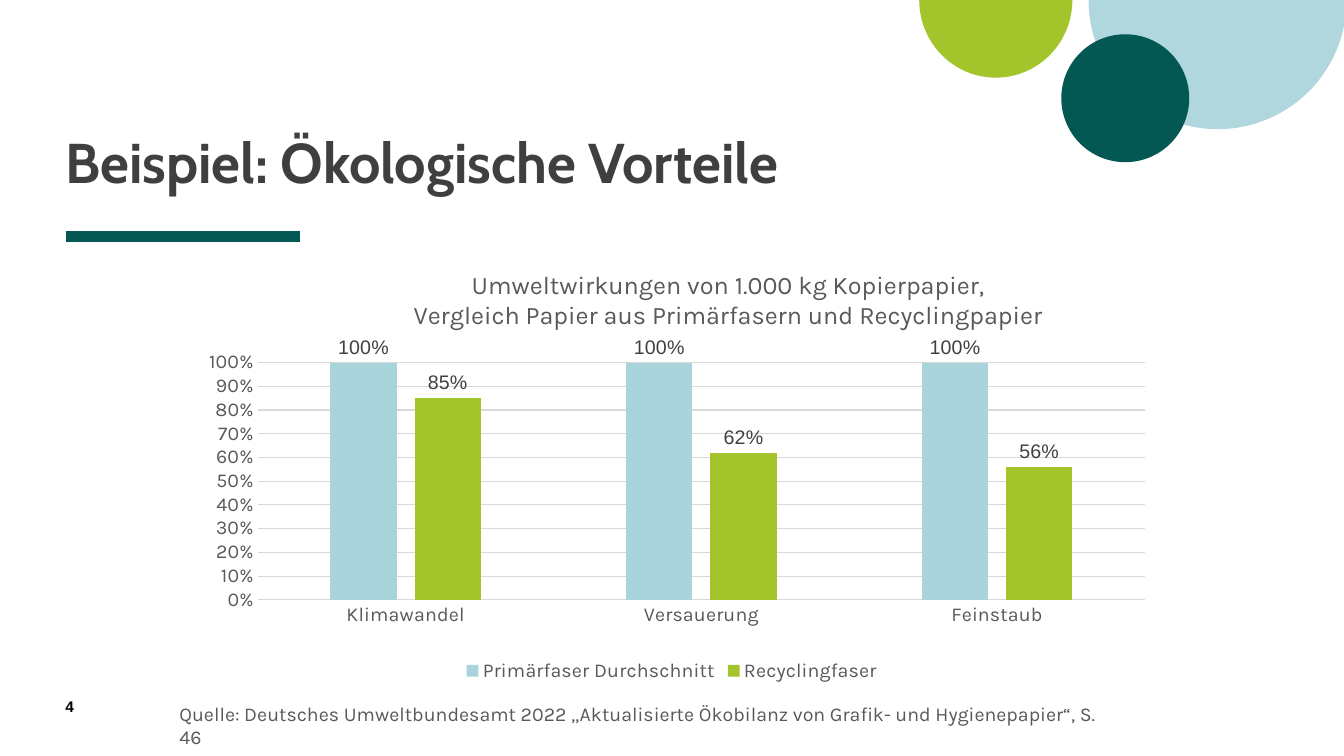
from lxml import etree
from pptx import Presentation
from pptx import util as u
from pptx.chart.data import CategoryChartData
from pptx.dml.color import RGBColor
from pptx.enum import chart as ch, shapes as sh, text as tx
from pptx.oxml import parse_xml
from pptx.oxml.ns import nsdecls, qn

TEAL, LIGHT_BLUE, GREEN = "035854", "AFD7DD", "A3C42A"
GREY, GRID = "595959", "D9D9D9"
KARLA = dict(name="Karla", size=u.Pt(14), bold=False)


def colour(value):
    """Turn a hex string into a colour."""
    return RGBColor.from_string(value)


def set_values(target, values):
    """Set every attribute given in a dict of format values."""
    for key, value in values.items():
        setattr(target, key, value)


def style_font(font, hex_colour, values):
    """Give a font its colour and format values."""
    set_values(font, values)
    font.color.rgb = colour(hex_colour)


def style_line(line, hex_colour, width):
    """Give a line its colour and width."""
    line.color.rgb = colour(hex_colour)
    line.width = u.Pt(width)


def add_text(slide, box, wording, hex_colour, font, frame, spacing=1.0):
    """Place one paragraph of text in a box."""
    text_frame = slide.shapes.add_textbox(*map(u.Pt, box)).text_frame
    set_values(text_frame, dict(word_wrap=True, **frame))
    paragraph = text_frame.paragraphs[0]
    paragraph.line_spacing = spacing
    run = paragraph.add_run()
    run.text = wording
    style_font(run.font, hex_colour, font)


def add_circles(slide, box):
    """Draw the corner circles relative to the box."""
    left, top, _, _ = box
    half, full = sh.MSO_SHAPE.PIE, sh.MSO_SHAPE.OVAL
    for kind, x, y, width, height, fill in (
        (half, 121, -92, 184.3, 184.3, LIGHT_BLUE),
        (half, 0, -55.4, 109.4, 110.9, GREEN),
        (full, 101.5, 24.5, 91.4, 91.4, TEAL),
    ):
        circle = slide.shapes.add_shape(kind, *map(u.Pt, (left + x, top + y, width, height)))
        circle.shadow.inherit = False
        circle.fill.solid()
        circle.fill.fore_color.rgb = colour(fill)
        circle.line.fill.background()
        if kind == half:
            circle.adjustments[0], circle.adjustments[1] = 0, 108


def add_heading(slide, box):
    """Place the title in the box and its rule below."""
    left, top, width, height = box
    no_margins = dict.fromkeys(("margin_left", "margin_top", "margin_right", "margin_bottom"), 0)
    add_text(slide, box, "Beispiel: Ökologische Vorteile", "3F3F3F",
             dict(name="Cabin", size=u.Pt(40), bold=True),
             dict(no_margins, vertical_anchor=tx.MSO_ANCHOR.BOTTOM), 0.8)
    rule_y = top + height + 30.2
    rule = slide.shapes.add_connector(
        sh.MSO_CONNECTOR.STRAIGHT, *map(u.Pt, (left, rule_y, left + 167.8, rule_y)))
    style_line(rule.line, TEAL, 8)
    etree.SubElement(rule._element.spPr, qn("a:effectLst"))


def set_layout(parent, index, **fractions):
    """Give a chart part a manual layout in fractions of the chart."""
    for previous in parent.findall(qn("c:layout")):
        parent.remove(previous)
    target = '<c:layoutTarget val="inner"/>' if "w" in fractions else ""
    modes = "".join(f'<c:{key}Mode val="edge"/>' for key in "xy")
    sizes = "".join(f'<c:{key} val="{value}"/>' for key, value in fractions.items())
    parent.insert(index, parse_xml(
        f'<c:layout {nsdecls("c")}><c:manualLayout>{target}{modes}{sizes}</c:manualLayout></c:layout>'))


def style_axes(chart):
    """Format both axes and the gridlines."""
    for axis in (chart.category_axis, chart.value_axis):
        set_values(axis, dict(major_tick_mark=ch.XL_TICK_MARK.NONE,
                              minor_tick_mark=ch.XL_TICK_MARK.NONE))
        style_font(axis.tick_labels.font, GREY, KARLA)
    style_line(chart.category_axis.format.line, GRID, 0.75)
    percent = chart.value_axis
    set_values(percent, dict(minimum_scale=0, maximum_scale=1, major_unit=0.1,
                             has_major_gridlines=True))
    set_values(percent.tick_labels, dict(number_format="0%", number_format_is_linked=False))
    percent.format.line.fill.background()
    style_line(percent.major_gridlines.format.line, GRID, 0.75)


def add_impact_chart(slide, box):
    """Place the chart of environmental impacts in the box."""
    impacts = CategoryChartData(number_format="0%")
    impacts.categories = ["Klimawandel", "Versauerung", "Feinstaub"]
    impacts.add_series("Primärfaser Durchschnitt", (1, 1, 1))
    impacts.add_series("Recyclingfaser", (0.85, 0.62, 0.56))
    chart = slide.shapes.add_chart(
        ch.XL_CHART_TYPE.COLUMN_CLUSTERED, *map(u.Pt, box), impacts).chart
    set_values(chart, dict(has_title=True, has_legend=True))
    style_font(chart.font, "000000", dict(name="Arial", size=u.Pt(10)))

    heading = chart.chart_title.text_frame.paragraphs[0]
    style_font(heading.font, GREY, dict(KARLA, size=u.Pt(18)))
    heading.add_run().text = "Umweltwirkungen von 1.000 kg Kopierpapier,"
    heading.add_line_break()
    heading.add_run().text = "Vergleich Papier aus Primärfasern und Recyclingpapier"
    for run in heading.runs:
        style_font(run.font, GREY, dict(KARLA, size=u.Pt(18)))
    set_layout(chart.chart_title._element, 1, x=0.24, y=0.02)
    set_layout(chart._chartSpace.chart.plotArea, 0, x=0.088, y=0.244, w=0.883, h=0.554)

    style_axes(chart)
    set_values(chart.legend, dict(position=ch.XL_LEGEND_POSITION.BOTTOM, include_in_layout=False))
    style_font(chart.legend.font, GREY, KARLA)
    columns = chart.plots[0]
    set_values(columns, dict(gap_width=219, overlap=-27, vary_by_categories=False))
    for fibre, fill in zip(columns.series, ("A9D4DB", GREEN)):
        fibre.format.fill.solid()
        fibre.format.fill.fore_color.rgb = colour(fill)
        set_values(fibre.data_labels, dict(
            show_value=True, position=ch.XL_LABEL_POSITION.OUTSIDE_END,
            number_format="0%", number_format_is_linked=False))
        style_font(fibre.data_labels.font, "404040", dict(name="Arial", size=u.Pt(14)))


def add_footer(slide, box):
    """Place the page number and the source line in the box."""
    left, top, width, height = box
    no_margins = dict.fromkeys(("margin_left", "margin_top", "margin_right", "margin_bottom"), 0)
    add_text(slide, (left, top + 0.7, 41, 19.4), "4", "000000",
             dict(name="Arial", size=u.Pt(11), bold=True), no_margins)
    add_text(slide, (left + 74.2, top, width - 74.2, height),
             "Quelle: Deutsches Umweltbundesamt 2022 „Aktualisierte Ökobilanz von "
             "Grafik- und Hygienepapier“, S. 46", GREY, KARLA, {})


def main():
    """Build the slide and save it."""
    deck = Presentation()
    set_values(deck, dict(slide_width=u.Pt(960), slide_height=u.Pt(540)))
    slide = deck.slides.add_slide(deck.slide_layouts[6])
    add_circles(slide, (656.6, 0, 303.4, 116))
    add_heading(slide, (46.8, 21.6, 769.7, 117.4))
    add_impact_chart(slide, (121, 184.3, 717.8, 306))
    add_footer(slide, (46.8, 497.5, 752.4, 41))
    deck.save("out.pptx")


if __name__ == "__main__":
    main()
